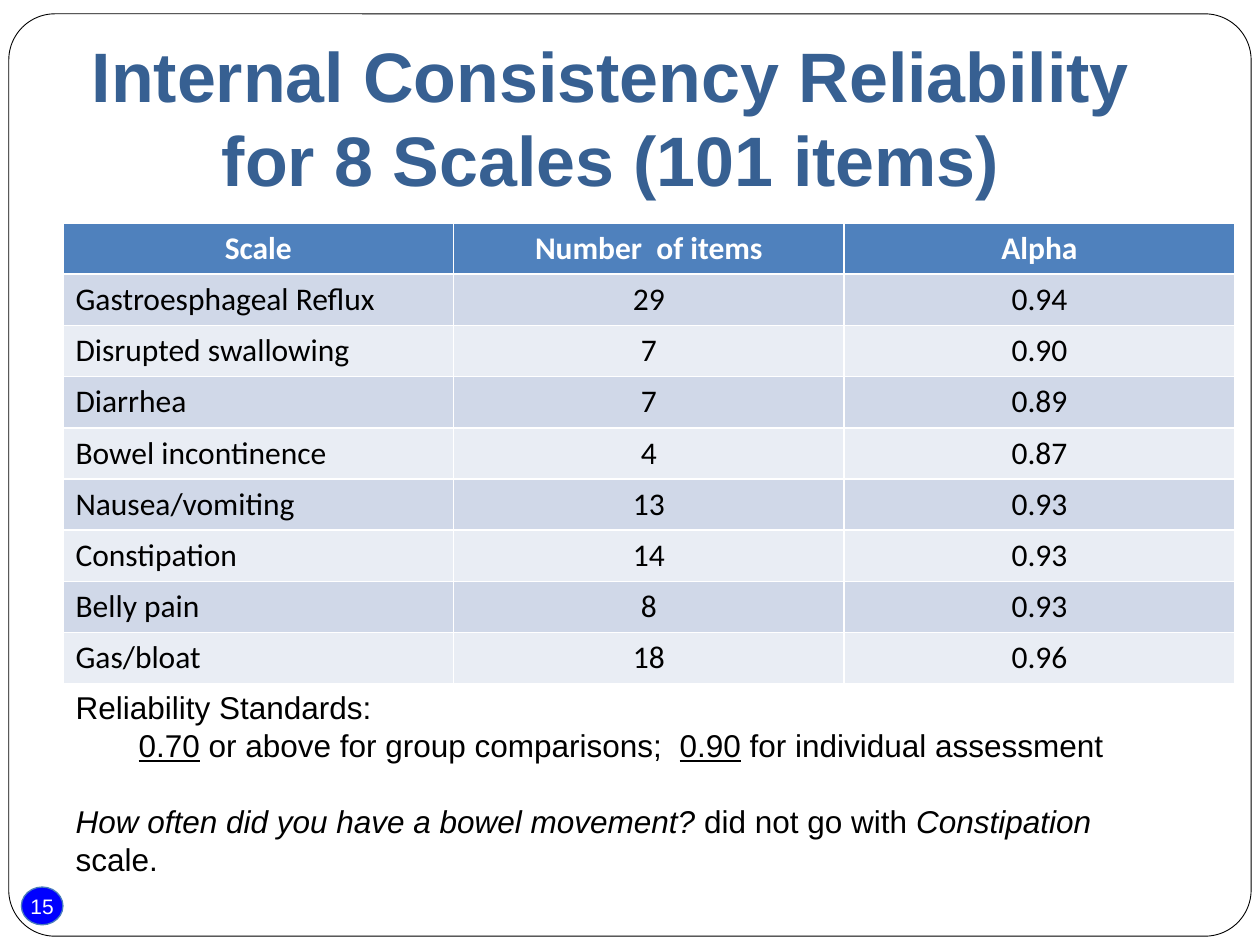
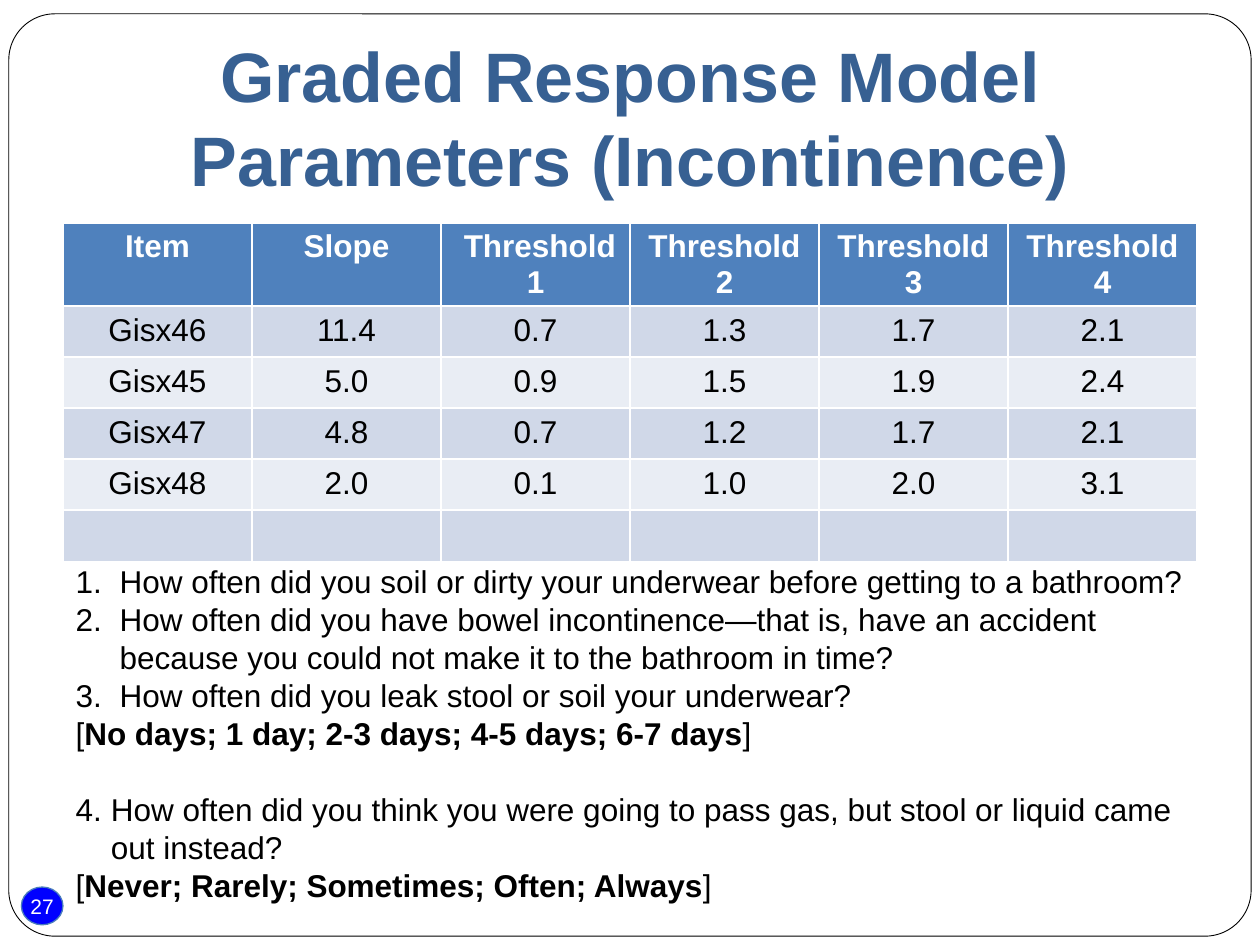
from dataclasses import dataclass

from lxml import etree
from pptx import Presentation
from pptx import util as u
from pptx.dml.color import RGBColor
from pptx.enum import shapes, text
from pptx.oxml import ns

# Colours and fonts
NAVY = RGBColor(0x37, 0x60, 0x92)
BLUE = RGBColor(0x4F, 0x81, 0xBD)
PALE = RGBColor(0xD0, 0xD8, 0xE8)
MIST = RGBColor(0xE9, 0xED, 0xF4)
BADGE = RGBColor(0x00, 0x00, 0xFF)
RIM = RGBColor(0x4B, 0x7E, 0xBC)
BLACK = RGBColor(0, 0, 0)
WHITE = RGBColor(0xFF, 0xFF, 0xFF)
SANS, HUMAN = "Arial", "Calibri"

# Grid of 100 columns by 75 rows
WIDE, HIGH = u.Inches(10), u.Inches(7.5)
COL, ROW = WIDE // 100, HIGH // 75

BODY, LEAD = 18, 21.7  # text size and line pitch, points
LEFT, MID = text.PP_ALIGN.LEFT, text.PP_ALIGN.CENTER


@dataclass(frozen=True)
class Box:
    col: float
    row: float
    cols: float
    rows: float

    def spot(self) -> tuple:
        return (u.Emu(round(self.col * COL)), u.Emu(round(self.row * ROW)),
                u.Emu(round(self.cols * COL)), u.Emu(round(self.rows * ROW)))


@dataclass(frozen=True)
class Run:
    words: str
    bold: bool = False
    slant: bool = False
    under: bool = False


@dataclass(frozen=True)
class Line:
    runs: tuple
    indent: float = 0   # inches
    number: int = 0     # list number, 0 for none
    gap: bool = False   # one line of space above


@dataclass(frozen=True)
class Grid:
    box: Box
    font: str
    first: text.PP_ALIGN  # alignment of the first column below the head
    rows: tuple


@dataclass(frozen=True)
class Page:
    number: int
    title: str
    head: Box
    grid: Grid
    note: Box
    lines: tuple


FRAME = Box(0.7, 1.1, 98.6, 73.2)
DISC = Box(1.7, 70.4, 3.3, 3)


def add_run(para, run: Run, size: float, tint: RGBColor, font: str = SANS) -> None:
    part = para.add_run()
    part.text = run.words
    face = part.font
    face.name, face.size, face.color.rgb = font, u.Pt(size), tint
    face.bold, face.italic, face.underline = run.bold, run.slant, run.under


def place(shape, box: Box) -> None:
    shape.left, shape.top, shape.width, shape.height = box.spot()


def add_frame(slide, number: int) -> None:
    """Rounded page border and number badge."""
    edge = slide.shapes.add_shape(shapes.MSO_SHAPE.ROUNDED_RECTANGLE, *FRAME.spot())
    edge.adjustments[0] = 0.05
    edge.fill.background()
    edge.line.color.rgb, edge.line.width = BLACK, u.Pt(0.5)

    disc = slide.shapes.add_shape(shapes.MSO_SHAPE.OVAL, *DISC.spot())
    disc.fill.solid()
    disc.fill.fore_color.rgb = BADGE
    disc.line.color.rgb, disc.line.width = RIM, u.Pt(0.75)
    edge.shadow.inherit = disc.shadow.inherit = False

    frame = disc.text_frame
    frame.margin_left = frame.margin_right = 0
    frame.margin_top = frame.margin_bottom = 0
    frame.word_wrap = False
    frame.vertical_anchor = text.MSO_ANCHOR.MIDDLE
    para = frame.paragraphs[0]
    para.alignment = MID
    add_run(para, Run(str(number)), 12, WHITE)


def add_title(slide, words: str, box: Box) -> None:
    title = slide.shapes.title
    place(title, box)
    frame = title.text_frame
    frame.auto_size = text.MSO_AUTO_SIZE.NONE
    frame.vertical_anchor = text.MSO_ANCHOR.MIDDLE
    para = frame.paragraphs[0]
    para.alignment, para.line_spacing = MID, u.Pt(48)
    add_run(para, Run(words, bold=True), 40, NAVY)


def add_grid(slide, grid: Grid) -> None:
    """Table with a dark head row and banded rows below."""
    count, wide = len(grid.rows), len(grid.rows[0])
    table = slide.shapes.add_table(count, wide, *grid.box.spot()).table
    for r, row in enumerate(grid.rows):
        head = r == 0
        for c, words in enumerate(row):
            cell = table.cell(r, c)
            cell.fill.solid()
            cell.fill.fore_color.rgb = BLUE if head else PALE if r % 2 else MIST
            para = cell.text_frame.paragraphs[0]
            para.alignment = grid.first if c == 0 and not head else MID
            if words:
                add_run(para, Run(words, bold=head), BODY,
                        WHITE if head else BLACK, grid.font)


def set_bullet(para, line: Line) -> None:
    props = para._p.get_or_add_pPr()
    inset = u.Inches(line.indent)
    props.set("marL", str(inset))
    props.set("indent", str(-inset if line.number else 0))
    if line.number:
        mark = etree.SubElement(props, ns.qn("a:buFont"))
        mark.set("typeface", SANS)
        mark = etree.SubElement(props, ns.qn("a:buAutoNum"))
        mark.set("type", "arabicPeriod")
        if line.number > 1:
            mark.set("startAt", str(line.number))
    else:
        etree.SubElement(props, ns.qn("a:buNone"))


def add_note(slide, box: Box, lines: tuple) -> None:
    body = slide.placeholders[1]
    place(body, box)
    frame = body.text_frame
    frame.word_wrap = True
    frame.auto_size = text.MSO_AUTO_SIZE.NONE
    frame.vertical_anchor = text.MSO_ANCHOR.TOP
    for i, line in enumerate(lines):
        para = frame.add_paragraph() if i else frame.paragraphs[0]
        para.alignment, para.line_spacing = LEFT, u.Pt(LEAD)
        para.space_before = u.Pt(LEAD if line.gap else 0)
        para.space_after = u.Pt(0)
        set_bullet(para, line)
        for run in line.runs:
            add_run(para, run, BODY, BLACK)


def item(number: int, words: str, indent: float = 0.35, gap: bool = False) -> Line:
    return Line((Run(words),), indent, number, gap)


def scale(words: str) -> Line:
    """Answer choices in square brackets."""
    return Line((Run("["), Run(words, bold=True), Run("]")))


# Slide content
ALPHA = Page(
    15, "Internal Consistency Reliability for 8 Scales (101 items)",
    Box(1.9, 3, 93.1, 12.5),
    Grid(Box(5, 17.7, 93, 36.6), HUMAN, LEFT, (
        ("Scale", "Number  of items", "Alpha"),
        ("Gastroesphageal Reflux", "29", "0.94"),
        ("Disrupted swallowing", "7", "0.90"),
        ("Diarrhea", "7", "0.89"),
        ("Bowel incontinence", "4", "0.87"),
        ("Nausea/vomiting", "13", "0.93"),
        ("Constipation", "14", "0.93"),
        ("Belly pain", "8", "0.93"),
        ("Gas/bloat", "18", "0.96"))),
    Box(5, 54.1, 85.9, 16.2), (
        Line((Run("Reliability Standards:"),)),
        Line((Run("0.70", under=True),
              Run(" or above for group comparisons;  "),
              Run("0.90", under=True),
              Run(" for individual assessment")), 0.5),
        Line((Run("How often did you have a bowel movement? ", slant=True),
              Run("did not go with "),
              Run("Constipation", slant=True),
              Run(" scale.")), gap=True)))

MODEL = Page(
    27, "Graded Response Model Parameters (Incontinence)",
    Box(5, 3, 90, 12.5),
    Grid(Box(5, 17.7, 90, 24.3), SANS, MID, (
        ("Item", "Slope", " Threshold 1", "Threshold 2", "Threshold 3", "Threshold 4"),
        ("Gisx46", "11.4", "0.7", "1.3", "1.7", "2.1"),
        ("Gisx45", "5.0", "0.9", "1.5", "1.9", "2.4"),
        ("Gisx47", "4.8", "0.7", "1.2", "1.7", "2.1"),
        ("Gisx48", "2.0", "0.1", "1.0", "2.0", "3.1"),
        ("",) * 6)),
    Box(5, 44.1, 91.5, 30), (
        item(1, "How often did you soil or dirty your underwear before getting to a bathroom?"),
        item(2, "How often did you have bowel incontinence—that is, have an accident "
                "because you could not make it to the bathroom in time?"),
        item(3, "How often did you leak stool or soil your underwear?"),
        scale("No days; 1 day; 2-3 days; 4-5 days; 6-7 days"),
        item(4, "How often did you think you were going to pass gas, but stool or "
                "liquid came out instead?", 0.28, True),
        scale("Never; Rarely; Sometimes; Often; Always")))


def main() -> None:
    deck = Presentation()
    deck.slide_width, deck.slide_height = WIDE, HIGH
    for page in (ALPHA, MODEL):
        slide = deck.slides.add_slide(deck.slide_layouts[1])
        add_frame(slide, page.number)
        add_title(slide, page.title, page.head)
        add_grid(slide, page.grid)
        add_note(slide, page.note, page.lines)
    deck.save("out.pptx")


if __name__ == "__main__":
    main()
